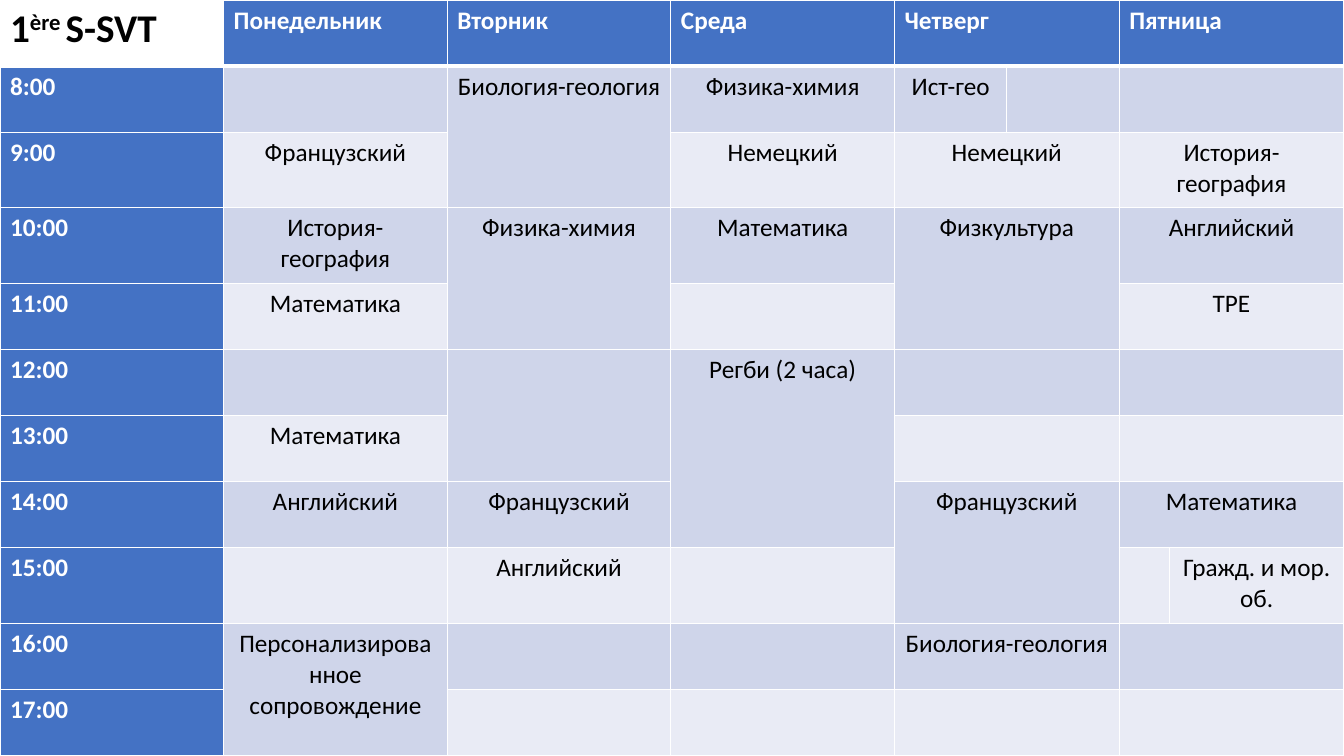
"""Build a weekly school timetable slide."""
from typing import NamedTuple

import lxml.etree
import pptx
import pptx.dml.color
import pptx.enum.text
import pptx.oxml.ns
import pptx.table
import pptx.util

EMU_PER_PX = 9525
SLIDE_WIDTH, SLIDE_HEIGHT = 1280, 720
COLUMN_WIDTHS = [213, 213, 213, 213, 107, 107, 48, 166]
SHORT_ROW, TALL_ROW = 63, 72
TALL_ROWS = {2, 3, 8}
FIRST_HOUR, LAST_HOUR = 8, 17

FONT = "Calibri"
BLUE, DARK_BAND, LIGHT_BAND = "4472C4", "CFD5EA", "E9EBF5"
WHITE, BLACK = "FFFFFF", "000000"
MONDAY, TUESDAY, WEDNESDAY, THURSDAY, FRIDAY = 1, 2, 3, 4, 6


class Entry(NamedTuple):
    row: int
    column: int
    text: str = ""
    rows: int = 1
    columns: int = 1


class TextPart(NamedTuple):
    text: str
    superscript: bool = False


TITLE = [TextPart("1"), TextPart("ère ", True), TextPart("S-SVT")]

DAYS = [
    Entry(0, MONDAY, "Понедельник"),
    Entry(0, TUESDAY, "Вторник"),
    Entry(0, WEDNESDAY, "Среда"),
    Entry(0, THURSDAY, "Четверг", columns=2),
    Entry(0, FRIDAY, "Пятница", columns=2),
]

LESSONS = [
    Entry(2, MONDAY, "Французский"),
    Entry(3, MONDAY, "История-география"),
    Entry(4, MONDAY, "Математика"),
    Entry(6, MONDAY, "Математика"),
    Entry(7, MONDAY, "Английский"),
    Entry(9, MONDAY, "Персонализированное сопровождение", rows=2),
    Entry(1, TUESDAY, "Биология-геология", rows=2),
    Entry(3, TUESDAY, "Физика-химия", rows=2),
    Entry(5, TUESDAY, rows=2),
    Entry(7, TUESDAY, "Французский"),
    Entry(8, TUESDAY, "Английский"),
    Entry(1, WEDNESDAY, "Физика-химия"),
    Entry(2, WEDNESDAY, "Немецкий"),
    Entry(3, WEDNESDAY, "Математика"),
    Entry(5, WEDNESDAY, "Регби (2 часа)", rows=3),
    Entry(1, THURSDAY, "Ист-гео"),
    Entry(2, THURSDAY, "Немецкий", columns=2),
    Entry(3, THURSDAY, "Физкультура", rows=2, columns=2),
    Entry(5, THURSDAY, columns=2),
    Entry(6, THURSDAY, columns=2),
    Entry(7, THURSDAY, "Французский", rows=2, columns=2),
    Entry(9, THURSDAY, "Биология-геология", columns=2),
    Entry(10, THURSDAY, columns=2),
    Entry(1, FRIDAY, columns=2),
    Entry(2, FRIDAY, "История-география", columns=2),
    Entry(3, FRIDAY, "Английский", columns=2),
    Entry(4, FRIDAY, "TPE", columns=2),
    Entry(5, FRIDAY, columns=2),
    Entry(6, FRIDAY, columns=2),
    Entry(7, FRIDAY, "Математика", columns=2),
    Entry(8, FRIDAY + 1, "Гражд. и мор. об."),
    Entry(9, FRIDAY, columns=2),
    Entry(10, FRIDAY, columns=2),
]

HOURS = [
    Entry(row, 0, f"{hour}:00")
    for row, hour in enumerate(range(FIRST_HOUR, LAST_HOUR + 1), start=1)
]


def px(length: int) -> pptx.util.Emu:
    """Convert pixels to EMU."""
    return pptx.util.Emu(length * EMU_PER_PX)


def color(value: str) -> pptx.dml.color.RGBColor:
    """Convert a hex string to a colour."""
    return pptx.dml.color.RGBColor.from_string(value)


def add_borders(cell: pptx.table._Cell, row: int) -> None:
    """Draw white borders, with a thick rule under the header."""
    properties = cell._tc.get_or_add_tcPr()
    thick_side = {0: "lnB", 1: "lnT"}.get(row)
    for side in ("lnL", "lnR", "lnT", "lnB"):
        points = 3 if side == thick_side else 1
        line = lxml.etree.SubElement(
            properties, pptx.oxml.ns.qn(f"a:{side}"), w=str(pptx.util.Pt(points))
        )
        fill = lxml.etree.SubElement(line, pptx.oxml.ns.qn("a:solidFill"))
        lxml.etree.SubElement(fill, pptx.oxml.ns.qn("a:srgbClr"), val=WHITE)


def style_cell(cell: pptx.table._Cell, row: int, column: int) -> None:
    """Give a cell its borders and its fill."""
    add_borders(cell, row)
    if row == column == 0:
        cell.fill.background()
        return
    band = DARK_BAND if row % 2 else LIGHT_BAND
    cell.fill.solid()
    cell.fill.fore_color.rgb = color(BLUE if row == 0 or column == 0 else band)


def write_run(
    cell: pptx.table._Cell, part: TextPart, size: int, ink: str, bold: bool
) -> None:
    """Add one formatted run to the first paragraph of a cell."""
    run = cell.text_frame.paragraphs[0].add_run()
    run.text = part.text
    run.font.name = FONT
    run.font.size = pptx.util.Pt(size)
    run.font.bold = bold
    run.font.color.rgb = color(ink)
    if part.superscript:
        run._r.get_or_add_rPr().set("baseline", "30000")


def place_entry(table: pptx.table.Table, entry: Entry, heading: bool) -> None:
    """Merge the cells of an entry and write its text."""
    cell = table.cell(entry.row, entry.column)
    if entry.rows > 1 or entry.columns > 1:
        cell.merge(
            table.cell(
                entry.row + entry.rows - 1, entry.column + entry.columns - 1
            )
        )
    if not entry.text:
        return
    if not heading:
        paragraph = cell.text_frame.paragraphs[0]
        paragraph.alignment = pptx.enum.text.PP_ALIGN.CENTER
    write_run(cell, TextPart(entry.text), 18, WHITE if heading else BLACK, heading)


def main() -> None:
    """Create the presentation and save it."""
    presentation = pptx.Presentation()
    presentation.slide_width = px(SLIDE_WIDTH)
    presentation.slide_height = px(SLIDE_HEIGHT)
    slide = presentation.slides.add_slide(presentation.slide_layouts[6])

    table = slide.shapes.add_table(
        len(HOURS) + 1, len(COLUMN_WIDTHS), 0, 0, px(SLIDE_WIDTH), px(SLIDE_HEIGHT)
    ).table
    table.first_row = False
    table.horz_banding = False
    for column, width in zip(table.columns, COLUMN_WIDTHS):
        column.width = px(width)
    for index, row in enumerate(table.rows):
        row.height = px(TALL_ROW if index in TALL_ROWS else SHORT_ROW)
        for column_index, cell in enumerate(row.cells):
            style_cell(cell, index, column_index)

    for part in TITLE:
        write_run(table.cell(0, 0), part, 28, BLACK, True)
    for entry in DAYS + HOURS:
        place_entry(table, entry, heading=True)
    for entry in LESSONS:
        place_entry(table, entry, heading=False)

    presentation.save("out.pptx")


if __name__ == "__main__":
    main()
